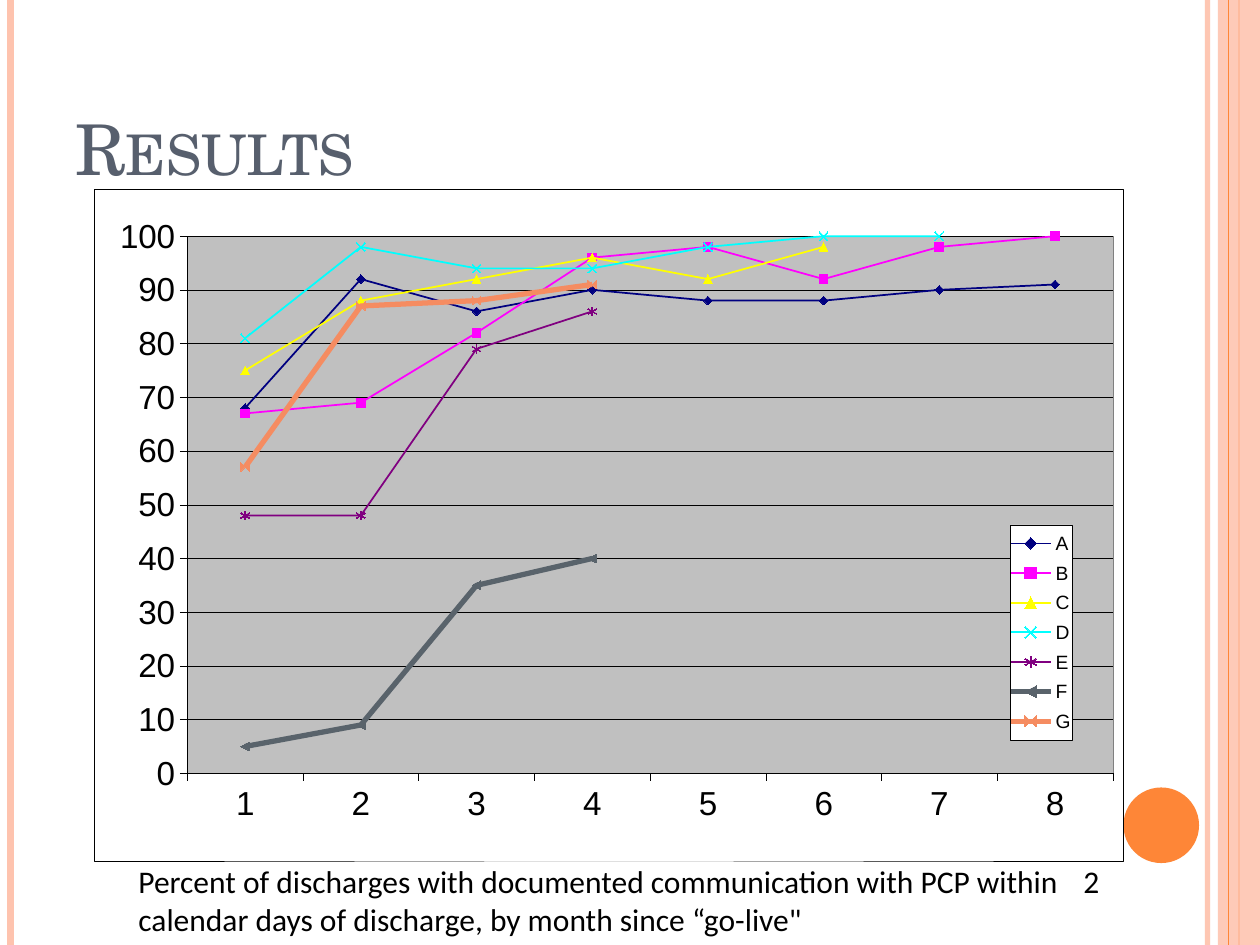
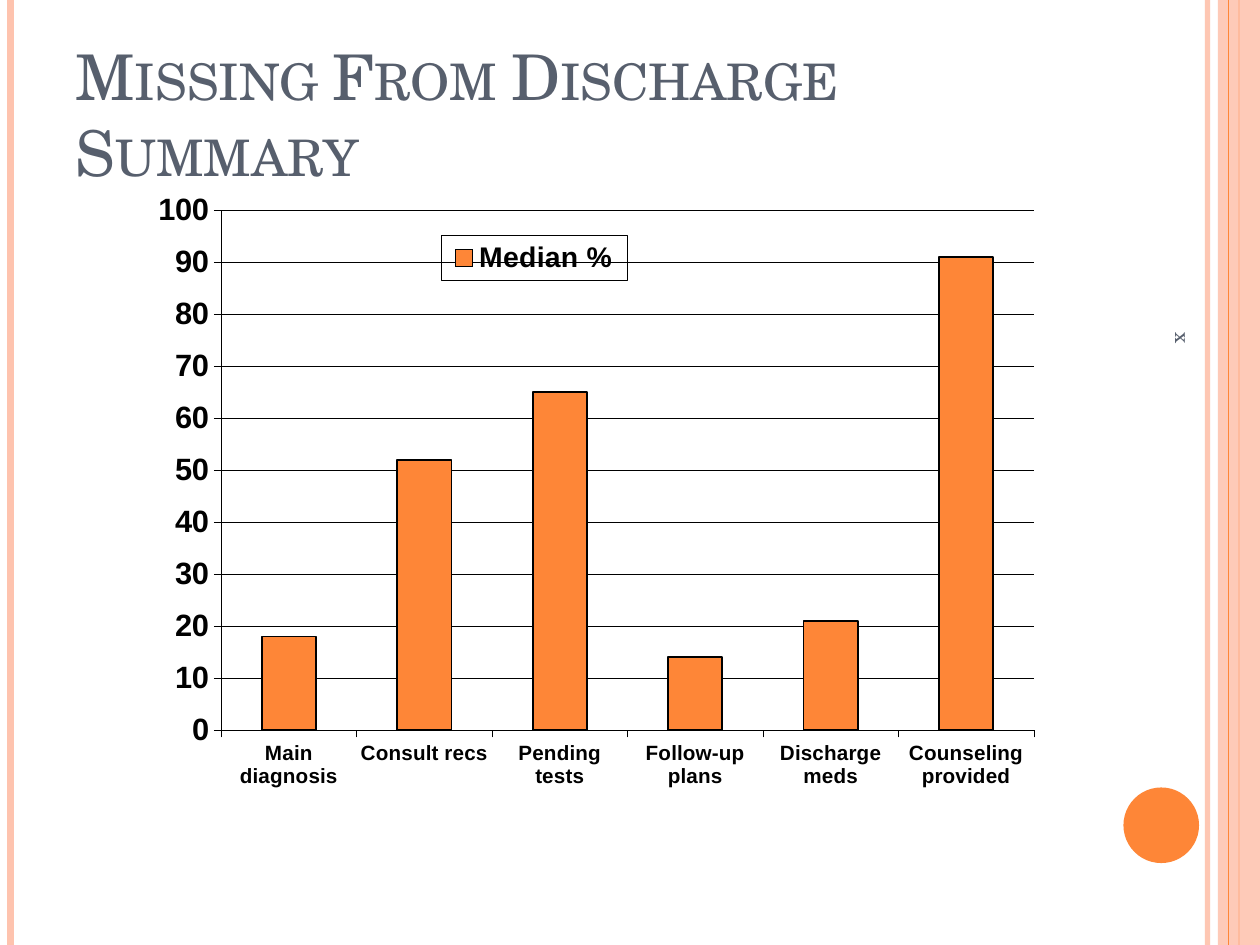
"""Build two results slides: a monthly line chart and a column chart."""
from lxml import etree
from pptx import Presentation
from pptx.chart.data import CategoryChartData
from pptx.dml.color import RGBColor
from pptx.enum.chart import XL_CHART_TYPE, XL_LEGEND_POSITION, XL_MARKER_STYLE, XL_TICK_LABEL_POSITION
from pptx.enum.shapes import MSO_CONNECTOR, MSO_SHAPE
from pptx.enum.text import MSO_ANCHOR, MSO_AUTO_SIZE
from pptx.oxml import parse_xml
from pptx.oxml.ns import nsdecls, qn
from pptx.util import Inches, Pt

LINE_CHART = XL_CHART_TYPE.LINE_MARKERS
COLUMN_CHART = XL_CHART_TYPE.COLUMN_CLUSTERED
RIGHT = XL_LEGEND_POSITION.RIGHT
LOW = XL_TICK_LABEL_POSITION.LOW
STRAIGHT = MSO_CONNECTOR.STRAIGHT
RECTANGLE, OVAL = MSO_SHAPE.RECTANGLE, MSO_SHAPE.OVAL
BOTTOM, MIDDLE = MSO_ANCHOR.BOTTOM, MSO_ANCHOR.MIDDLE
GROW = MSO_AUTO_SIZE.SHAPE_TO_FIT_TEXT
DIAMOND, SQUARE, TRIANGLE = XL_MARKER_STYLE.DIAMOND, XL_MARKER_STYLE.SQUARE, XL_MARKER_STYLE.TRIANGLE
CROSS, STAR = XL_MARKER_STYLE.X, XL_MARKER_STYLE.STAR

COLORS = {
    "peach": "FEC3AE", "orange": "FE8637", "slate": "575F6D", "black": "000000",
    "white": "FFFFFF", "silver": "C0C0C0", "gray": "808080", "navy": "000080",
    "magenta": "FF00FF", "yellow": "FFFF00", "cyan": "00FFFF", "purple": "800080",
    "steel": "59636B", "salmon": "F58C61",
}
RGB = {name: RGBColor.from_string(value) for name, value in COLORS.items()}
TITLE_FONT, CHART_FONT, CAPTION_FONT = "TeX Gyre Schola", "Arial", "Calibri"
COLUMNS, ROWS = 120, 90
CELL = Inches(10) // COLUMNS


def add_text(slide, text, area, font_name, size, color, anchor=None):
    """Add a wrapping text box on the grid and return it."""
    box = slide.shapes.add_textbox(*[int(cells * CELL) for cells in area])
    box.text_frame.word_wrap = True
    box.text_frame.vertical_anchor = anchor
    paragraph = box.text_frame.paragraphs[0]
    paragraph.text = text
    paragraph.font.name = font_name
    paragraph.font.size = Pt(size)
    paragraph.font.color.rgb = RGB[color]
    return box


def chart_part(fill, line):
    """Return the fill and outline element of one part of a chart."""
    paints = [
        f'<a:solidFill><a:srgbClr val="{COLORS[color]}"/></a:solidFill>' if color else "<a:noFill/>"
        for color in (fill, line)
    ]
    return parse_xml(f'<c:spPr {nsdecls("c", "a")}>{paints[0]}<a:ln w="3175">{paints[1]}</a:ln></c:spPr>')


presentation = Presentation()
presentation.slide_width = COLUMNS * CELL
presentation.slide_height = ROWS * CELL

SLIDES = [
    {
        "title": "Results", "title_size": 40,
        "type": LINE_CHART, "area": (9, 18, 98, 64),
        "categories": [str(month) for month in range(1, 9)],
        "series": [
            ("A ", [68, 92, 86, 90, 88, 88, 90, 91], "navy", DIAMOND),
            ("B", [67, 69, 82, 96, 98, 92, 98, 100], "magenta", SQUARE),
            ("C", [75, 88, 92, 96, 92, 98, None, None], "yellow", TRIANGLE),
            ("D", [81, 98, 94, 94, 98, 100, 100, None], "cyan", CROSS),
            ("E", [48, 48, 79, 86, None, None, None, None], "purple", STAR),
            ("F", [5, 9, 35, 40, None, None, None, None], "steel", None),
            ("G", [57, 87, 88, 91, None, None, None, None], "salmon", None),
        ],
        "sizes": (19, 19, 11), "bold": False,
        "plot": (0.09, 0.07, 0.9, 0.8), "legend": (0.89, 0.5, 0.06, 0.32),
        "paint": {"chart": ("white", "black"), "plot": ("silver", "gray"), "legend": ("white", "black")},
    },
    {
        "title": "Missing From Discharge Summary", "title_size": 36,
        "type": COLUMN_CHART, "area": (12.7, 17.6, 104.6, 60.4),
        "categories": ["Main diagnosis", "Consult recs", "Pending tests",
                       "Follow-up plans", "Discharge meds", "Counseling provided"],
        "series": [("Median %", [18, 52, 65, 14, 21, 91], "orange", None)],
        "sizes": (11.8, 17.6, 16.2), "bold": True,
        "plot": (0.08, 0.04, 0.74, 0.82), "legend": (0.28, 0.08, 0.17, 0.07),
        "paint": {"chart": (None, None), "plot": (None, None), "legend": (None, "black")},
    },
]
BANDS = [
    ("line", 115, 3, "peach", 93), ("line", 1, 4.5, "peach", 100), ("line", 118, 1.5, "orange", 100),
    ("strip", 116, 4, "peach", 87), ("line", 117, 0.75, "orange", 100),
]

for content in SLIDES:
    slide = presentation.slides.add_slide(presentation.slide_layouts[6])

    for kind, column, weight, color, opacity in BANDS:
        if kind == "line":
            band = slide.shapes.add_connector(STRAIGHT, column * CELL, 0, column * CELL, ROWS * CELL)
            band.line.width = Pt(weight)
            band.line.color.rgb = RGB[color]
            etree.SubElement(band.element.spPr, qn("a:effectLst"))
        else:
            band = slide.shapes.add_shape(RECTANGLE, column * CELL, 0, weight * CELL, ROWS * CELL)
            band.shadow.inherit = False
            band.fill.solid()
            band.fill.fore_color.rgb = RGB[color]
            band.line.fill.background()
        if opacity < 100:
            paint = next(band.element.spPr.iter(qn("a:srgbClr")))
            etree.SubElement(paint, qn("a:alpha")).set("val", str(opacity * 1000))

    disc = slide.shapes.add_shape(OVAL, 107 * CELL, 75 * CELL, int(7.2 * CELL), int(7.2 * CELL))
    disc.shadow.inherit = False
    disc.fill.solid()
    disc.fill.fore_color.rgb = RGB["orange"]
    disc.line.fill.background()

    title = add_text(slide, content["title"], (6, 3.6, 98, 15), TITLE_FONT, content["title_size"], "slate", BOTTOM)
    next(title.element.iter(qn("a:defRPr"))).set("cap", "small")

    chart_data = CategoryChartData()
    chart_data.categories = content["categories"]
    for name, values, color, marker in content["series"]:
        chart_data.add_series(name, values)
    area = [int(cells * CELL) for cells in content["area"]]
    chart = slide.shapes.add_chart(content["type"], *area, chart_data).chart
    category_size, value_size, legend_size = content["sizes"]
    chart.has_title = False
    chart.has_legend = True
    chart.legend.position = RIGHT
    chart.legend.include_in_layout = False
    chart.plots[0].vary_by_categories = False

    axes = (chart.category_axis, chart.value_axis)
    for font, size in [(chart.font, value_size), (axes[0].tick_labels.font, category_size),
                       (axes[1].tick_labels.font, value_size), (chart.legend.font, legend_size)]:
        font.name = CHART_FONT
        font.size = Pt(size)
        font.bold = content["bold"]
        font.color.rgb = RGB["black"]

    chart.value_axis.minimum_scale = 0
    chart.value_axis.maximum_scale = 100
    chart.value_axis.major_unit = 10
    chart.value_axis.tick_labels.number_format = "0"
    chart.value_axis.tick_labels.number_format_is_linked = False
    chart.category_axis.tick_label_position = LOW
    for ruled in (*axes, chart.value_axis.major_gridlines):
        ruled.format.line.width = Pt(0.25)
        ruled.format.line.color.rgb = RGB["black"]

    for series, (name, values, color, marker) in zip(chart.plots[0].series, content["series"]):
        line = series.format.line
        if content["type"] == COLUMN_CHART:
            chart.plots[0].gap_width = 150
            series.format.fill.solid()
            series.format.fill.fore_color.rgb = RGB[color]
            line.color.rgb = RGB["black"]
            line.width = Pt(1)
            continue
        series.smooth = False
        line.color.rgb = RGB[color]
        line.width = Pt(1 if marker else 3)
        if marker:
            series.marker.style = marker
            series.marker.size = 5
            series.marker.format.line.color.rgb = RGB[color]
            if marker in (CROSS, STAR):
                series.marker.format.fill.background()
            else:
                series.marker.format.fill.solid()
                series.marker.format.fill.fore_color.rgb = RGB[color]

    chart_space = chart.element
    plot_area = next(chart_space.iter(qn("c:plotArea")))
    legend = next(chart_space.iter(qn("c:legend")))
    for part, key, index in [(plot_area, "plot", 0), (legend, "legend", 1)]:
        for old_layout in part.findall(qn("c:layout")):
            part.remove(old_layout)
        layout = etree.Element(qn("c:layout"))
        manual = etree.SubElement(layout, qn("c:manualLayout"))
        settings = [("layoutTarget", "inner")] if key == "plot" else []
        settings += [("xMode", "edge"), ("yMode", "edge"), *zip("xywh", content[key])]
        for tag, value in settings:
            etree.SubElement(manual, qn(f"c:{tag}")).set("val", str(value))
        part.insert(index, layout)
    paint = content["paint"]
    plot_area.append(chart_part(*paint["plot"]))
    legend.find(qn("c:overlay")).addnext(chart_part(*paint["legend"]))
    chart_space.find(qn("c:chart")).addnext(chart_part(*paint["chart"]))
    if chart_space.find(qn("c:roundedCorners")) is None:
        corners = etree.Element(qn("c:roundedCorners"))
        corners.set("val", "0")
        chart_space.find(qn("c:date1904")).addnext(corners)

results_slide, missing_slide = presentation.slides
caption = add_text(
    results_slide,
    "Percent of discharges with documented communication with PCP within "
    "\t2 calendar days of discharge, by month since “go-live\"",
    (12, 81.5, 98, 8.5), CAPTION_FONT, 18, "black",
)
caption.text_frame.auto_size = GROW
side_mark = add_text(missing_slide, "x", (91.7, 49.1, 42, 4.8), TITLE_FONT, 12, "slate", MIDDLE)
side_mark.rotation = 90

presentation.save("out.pptx")
